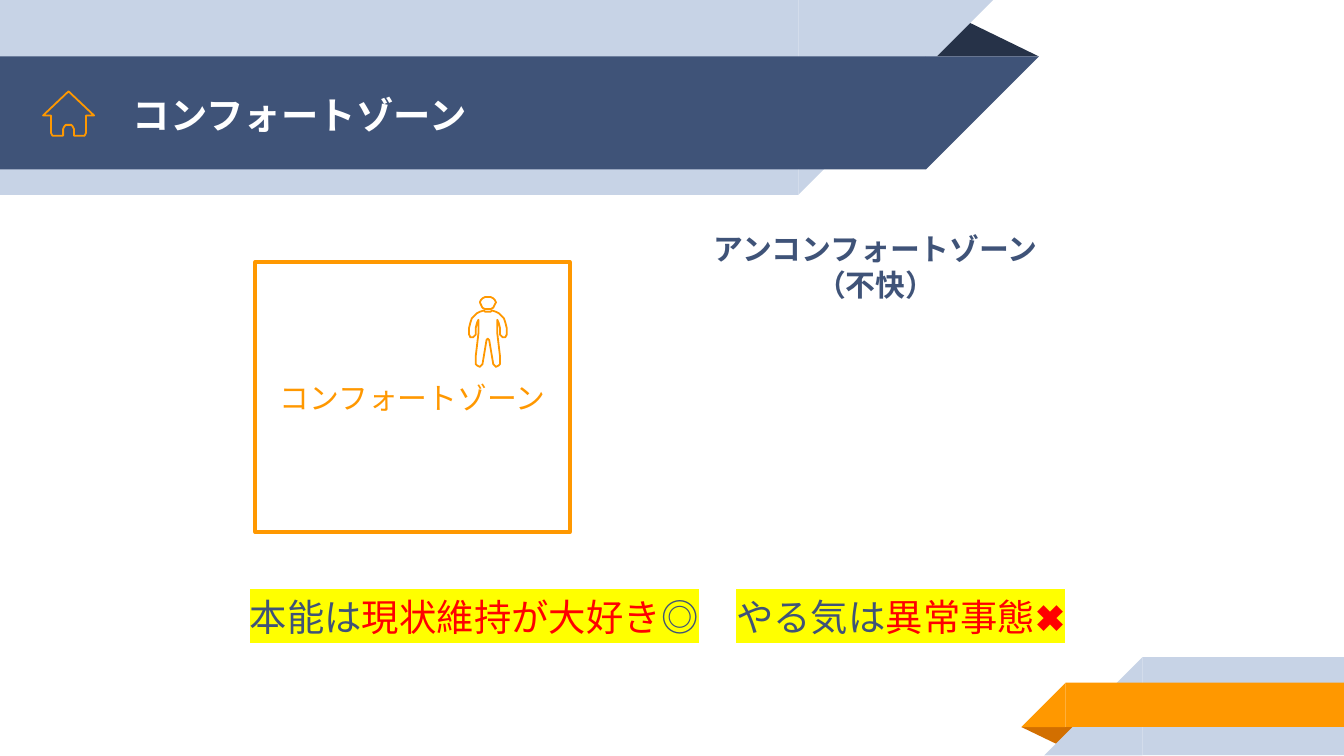
import pptx
import pptx.dml.color
import pptx.enum.shapes
import pptx.enum.text
import pptx.oxml.ns
import pptx.util
from dataclasses import dataclass
from lxml import etree

Inches = pptx.util.Inches
SHAPE = pptx.enum.shapes.MSO_SHAPE
ALIGN = pptx.enum.text.PP_ALIGN
ANCHOR = pptx.enum.text.MSO_ANCHOR


@dataclass(frozen=True)
class Theme:
    navy: str = "3F5378"
    dark_navy: str = "263248"
    pale_blue: str = "C7D3E6"
    orange: str = "FF9800"
    dark_orange: str = "D26F00"
    white: str = "FFFFFF"
    red: str = "FF0000"
    yellow: str = "FFFF00"
    font: str = "Noto Sans CJK JP"
    message_font: str = "Arial"
    large: int = 20
    medium: int = 16
    icon_line: float = 0.96
    box_line: float = 2


THEME = Theme()

# Icon outlines in inches; the halves run down the left side
HOUSE_AXIS = 0.51
HOUSE_HALF = [(0.51, 0.68), (0.32, 0.86), (0.38, 0.86), (0.38, 0.99),
              (0.39, 1.01), (0.47, 1.01), (0.47, 0.96), (0.48, 0.94),
              (0.49, 0.93), (0.51, 0.93)]
PERSON_AXIS = 3.63
HEAD_HALF = [(3.63, 2.21), (3.61, 2.21), (3.59, 2.22), (3.58, 2.23),
             (3.57, 2.25), (3.58, 2.27), (3.59, 2.29), (3.61, 2.3),
             (3.63, 2.3)]
BODY_HALF = [(3.63, 2.32), (3.61, 2.32), (3.6, 2.31), (3.57, 2.32),
             (3.55, 2.33), (3.53, 2.35), (3.51, 2.37), (3.5, 2.4),
             (3.49, 2.44), (3.49, 2.49), (3.5, 2.51), (3.52, 2.51),
             (3.53, 2.5), (3.54, 2.49), (3.54, 2.44), (3.55, 2.4),
             (3.56, 2.38), (3.56, 2.48), (3.54, 2.65), (3.54, 2.71),
             (3.55, 2.72), (3.57, 2.73), (3.58, 2.72), (3.59, 2.71),
             (3.62, 2.53), (3.63, 2.52)]


def rgb(color):
    return pptx.dml.color.RGBColor.from_string(color)


def add_shape(slide, kind, left, top, width, height, fill, rotation=0):
    shape = slide.shapes.add_shape(
        kind, Inches(left), Inches(top), Inches(width), Inches(height))
    shape.shadow.inherit = False
    shape.fill.solid()
    shape.fill.fore_color.rgb = rgb(fill)
    shape.line.fill.background()
    shape.rotation = rotation
    return shape


def add_left_band(slide, top, width, height, fill):
    """Band from the left edge whose right end slants at 45 degrees."""
    add_shape(slide, SHAPE.RECTANGLE, 0, top, width, height, fill)
    add_shape(slide, SHAPE.RIGHT_TRIANGLE, width, top, height, height, fill, 90)


def add_right_band(slide, left, top, height, fill):
    """Band to the right edge whose left end slants at 45 degrees."""
    add_shape(slide, SHAPE.RECTANGLE, left, top, 10 - left, height, fill)
    add_shape(slide, SHAPE.RIGHT_TRIANGLE, left - height, top, height, height,
              fill, 270)


def add_fold(slide, left, top, width, height, fill, rotation=0):
    fold = add_shape(slide, SHAPE.ISOSCELES_TRIANGLE, left, top, width, height,
                     fill, rotation)
    fold.adjustments[0] = 0.324


def add_outline(slide, half, axis):
    """Closed icon outline, mirrored about a vertical axis."""
    mirrored = [(2 * axis - x, y) for x, y in reversed(half)]
    points = [(Inches(x), Inches(y)) for x, y in half + mirrored]
    builder = slide.shapes.build_freeform(*points[0], scale=1.0)
    builder.add_line_segments(points[1:], close=True)
    outline = builder.convert_to_shape()
    outline.shadow.inherit = False
    outline.fill.background()
    outline.line.color.rgb = rgb(THEME.orange)
    outline.line.width = pptx.util.Pt(THEME.icon_line)


def style_run(run, size, color, font=THEME.font, bold=False, highlight=None):
    run.font.size = pptx.util.Pt(size)
    run.font.bold = bold
    run.font.color.rgb = rgb(color)
    run.font.name = font
    qn = pptx.oxml.ns.qn
    properties = run.font._element
    latin = properties.find(qn("a:latin"))
    if highlight:
        marker = etree.Element(qn("a:highlight"))
        etree.SubElement(marker, qn("a:srgbClr"), val=highlight)
        latin.addprevious(marker)
    latin.addnext(etree.Element(qn("a:ea"), typeface=THEME.font))


def add_text_box(slide, left, top, width, height, anchor, wrap=False):
    frame = slide.shapes.add_textbox(
        Inches(left), Inches(top), Inches(width), Inches(height)).text_frame
    frame.word_wrap = wrap
    frame.vertical_anchor = anchor
    return frame


def write_lines(frame, lines, size, color, align, bold=False):
    frame.text = "\n".join(lines)
    for paragraph in frame.paragraphs:
        paragraph.alignment = align
        for run in paragraph.runs:
            style_run(run, size, color, bold=bold)


def main():
    deck = pptx.Presentation()
    deck.slide_width = Inches(10)
    deck.slide_height = deck.slide_width * 9 // 16
    slide = deck.slides.add_slide(deck.slide_layouts[6])

    # Header ribbon
    add_fold(slide, 6.88, 0.14, 0.85, 0.28, THEME.dark_navy)
    add_left_band(slide, 0, 5.94, 1.45, THEME.pale_blue)
    add_left_band(slide, 0.42, 6.89, 0.84, THEME.navy)

    # Corner ribbon
    add_fold(slide, 7.6, 5.41, 0.43, 0.14, THEME.dark_orange, 180)
    add_right_band(slide, 8.5, 4.89, 0.73, THEME.pale_blue)
    add_right_band(slide, 7.93, 5.08, 0.33, THEME.orange)

    # Title and house icon
    title = add_text_box(slide, 0.89, 0.43, 5.75, 0.84, ANCHOR.MIDDLE, True)
    write_lines(title, ["コンフォートゾーン"], THEME.large, THEME.white,
                ALIGN.LEFT, bold=True)
    add_outline(slide, HOUSE_HALF, HOUSE_AXIS)

    # Comfort zone with the person inside
    comfort_zone = add_shape(slide, SHAPE.RECTANGLE, 1.9, 1.95, 2.34, 2.01,
                             THEME.white)
    comfort_zone.line.color.rgb = rgb(THEME.orange)
    comfort_zone.line.width = pptx.util.Pt(THEME.box_line)
    comfort_zone.text_frame.vertical_anchor = ANCHOR.MIDDLE
    write_lines(comfort_zone.text_frame, ["コンフォートゾーン"], THEME.medium,
                THEME.orange, ALIGN.CENTER)
    for half in (BODY_HALF, HEAD_HALF):
        add_outline(slide, half, PERSON_AXIS)

    # Discomfort zone
    discomfort_zone = add_text_box(slide, 5.17, 1.67, 2.69, 0.64, ANCHOR.TOP)
    write_lines(discomfort_zone, ["アンコンフォートゾーン", "（不快）"],
                THEME.medium, THEME.navy, ALIGN.CENTER, bold=True)

    # Highlighted message
    message = add_text_box(slide, 1.76, 4.37, 6.48, 0.44, ANCHOR.MIDDLE)
    for words, color, highlight in (
            ("本能は", THEME.navy, THEME.yellow),
            ("現状維持が大好き", THEME.red, THEME.yellow),
            ("◎", THEME.navy, THEME.yellow),
            ("　", THEME.navy, None),
            ("やる気は", THEME.navy, THEME.yellow),
            ("異常事態✖", THEME.red, THEME.yellow)):
        run = message.paragraphs[0].add_run()
        run.text = words
        style_run(run, THEME.large, color, THEME.message_font,
                  highlight=highlight)

    deck.save("out.pptx")


if __name__ == "__main__":
    main()
